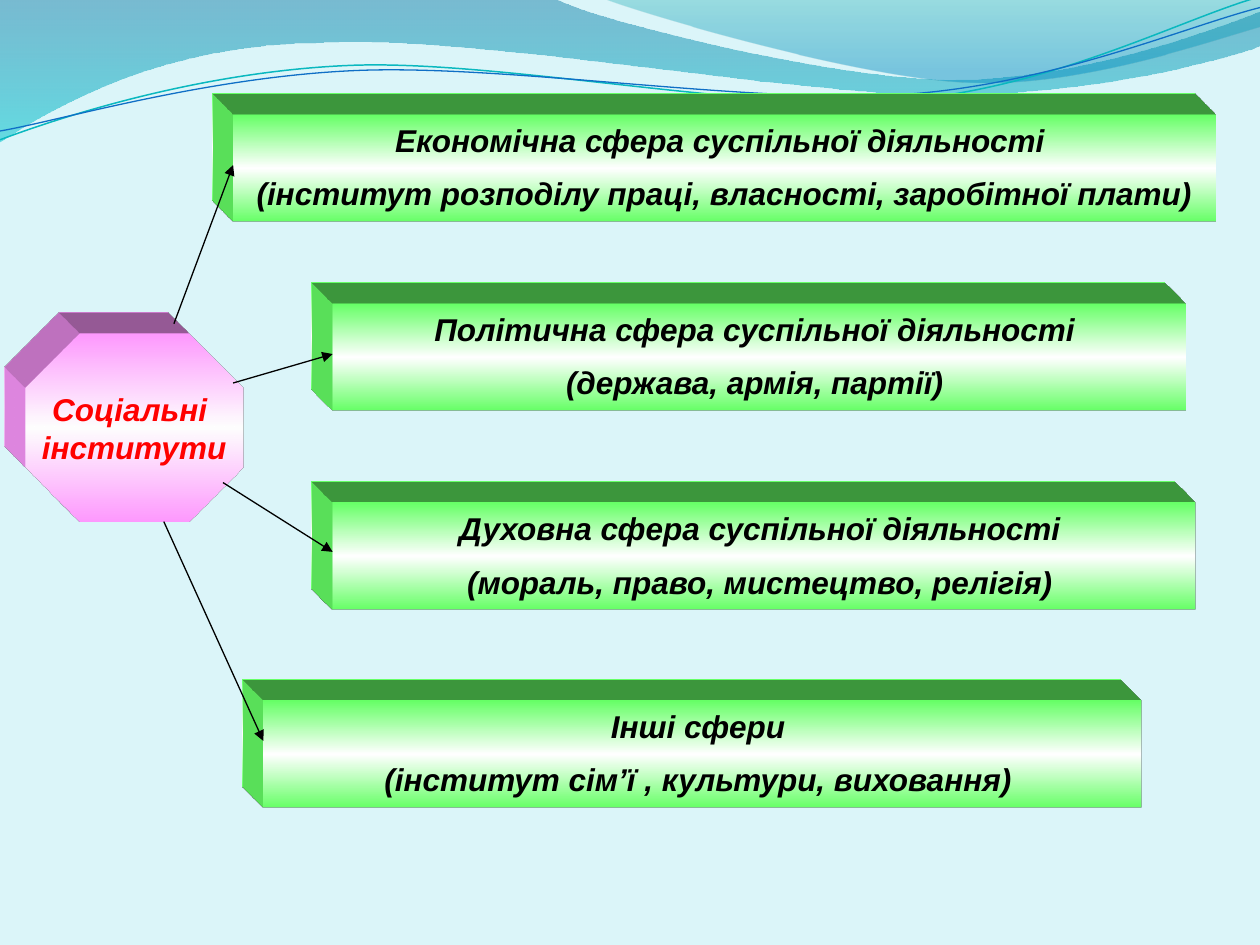
from lxml.etree import SubElement
from pptx import Presentation
from pptx.dml.color import RGBColor
from pptx.enum.shapes import MSO_CONNECTOR, MSO_SHAPE
from pptx.enum.text import MSO_ANCHOR, MSO_AUTO_SIZE, PP_ALIGN
from pptx.oxml import parse_xml
from pptx.oxml.ns import nsdecls, qn
from pptx.util import Inches, Pt

GREEN, PINK, WHITE = "66FF66", "FF99FF", "FFFFFF"
BARS = [
    ((1.85, 0.91, 7.8, 0.85), "Економічна сфера суспільної діяльності ",
     "(інститут розподілу праці, власності, заробітної плати)"),
    ((2.64, 2.41, 6.77, 0.85), "Політична сфера суспільної діяльності ",
     "(держава, армія, партії) "),
    ((2.64, 3.99, 6.85, 0.85), "Духовна сфера суспільної діяльності ",
     "(мораль, право, мистецтво, релігія) "),
    ((2.09, 5.56, 6.97, 0.85), "Інші сфери ",
     "(інститут сім’ї , культури, виховання) "),
]
ARROWS = [
    ((1.38, 2.57), (1.85, 1.31)),
    ((1.85, 3.04), (2.64, 2.81)),
    ((1.77, 3.83), (2.64, 4.38)),
    ((1.3, 4.14), (2.09, 5.88)),
]


def color(text):
    return RGBColor.from_string(text)


def shade(shape, stops):
    shape.shadow.inherit = False
    shape.line.fill.background()
    marks = "".join(
        f'<a:gs pos="{pos * 1000}"><a:srgbClr val="{tone}">'
        f'<a:alpha val="{solid * 1000}"/></a:srgbClr></a:gs>'
        for pos, tone, solid in stops)
    grad = parse_xml(
        f'<a:gradFill {nsdecls("a")} rotWithShape="1"><a:gsLst>{marks}</a:gsLst>'
        '<a:lin ang="5400000" scaled="1"/></a:gradFill>')
    shape.fill.solid()
    old = shape._element.spPr.find(qn("a:solidFill"))
    old.getparent().replace(old, grad)


def extrude(shape, tone):
    props = shape._element.spPr
    props.append(parse_xml(
        f'<a:scene3d {nsdecls("a")}><a:camera prst="legacyObliqueTopLeft"/>'
        '<a:lightRig rig="legacyFlat3" dir="b"/></a:scene3d>'))
    props.append(parse_xml(
        f'<a:sp3d {nsdecls("a")} extrusionH="430200" prstMaterial="legacyMatte">'
        '<a:bevelT w="13500" h="13500" prst="angle"/>'
        '<a:bevelB w="13500" h="13500" prst="angle"/>'
        f'<a:extrusionClr><a:srgbClr val="{tone}"/></a:extrusionClr></a:sp3d>'))


def trace(slide, start, parts, close):
    pen = slide.shapes.build_freeform(*map(Inches, start))
    pen.add_line_segments(
        [(Inches(x), Inches(y)) for part in parts for x, y in part], close)
    shape = pen.convert_to_shape()
    shape.shadow.inherit = False
    steps = iter(list(shape._element.iter(qn("a:lnTo"))))
    for part in parts:
        group = [next(steps) for _ in part]
        if len(group) == 3:
            bend = group[0]
            bend.tag = qn("a:cubicBezTo")
            for step in group[1:]:
                bend.append(step[0])
                step.getparent().remove(step)
    return shape


def waves(slide):
    low = trace(slide, (0, -0.01), [
        [(4.4, -0.01)],
        [(4.76, 0.17), (6.64, 0.63), (7.58, 0.63)],
        [(8.53, 0.63), (9.58, 0.26), (10, 0.09)],
        [(10.01, 0.36)],
        [(9.83, 0.44), (8.7, 0.76), (7.46, 0.75)],
        [(6.22, 0.75), (3.82, 0.28), (2.57, 0.34)],
        [(1.29, 0.35), (0.46, 0.83), (-0.01, 1.13)]], True)
    shade(low, [(0, "0074A1", 45), (100, "00C6CF", 55)])
    high = trace(slide, (4.79, -0.01), [
        [(5.09, 0.11), (6.82, 0.62), (7.69, 0.65)],
        [(8.56, 0.69), (9.61, 0.32), (10, 0.21)],
        [(10, 0)]], True)
    shade(high, [(0, "00A1A9", 30), (80, "008BBF", 45)])
    lines = [
        ("0AB8BF", 0.85, (0, 1.11), [
            [(0.48, 0.93), (1.58, 0.57), (2.77, 0.52)],
            [(3.95, 0.47), (5.93, 0.89), (7.13, 0.8)],
            [(8.33, 0.71), (9.38, 0.15), (9.98, -0.02)]]),
        ("0F6FC6", 0.75, (0, 1.04), [
            [(0.47, 0.96), (1.64, 0.61), (2.83, 0.56)],
            [(4.03, 0.51), (5.97, 0.83), (7.17, 0.75)],
            [(8.36, 0.67), (9.41, 0.21), (10, 0.06)]]),
    ]
    for tone, width, start, parts in lines:
        line = trace(slide, start, parts, False)
        line.fill.background()
        line.line.color.rgb = color(tone)
        line.line.width = Pt(width)


def block(slide, kind, box, tone, ink, texts, gap):
    shape = slide.shapes.add_shape(kind, *map(Inches, box))
    shade(shape, [(0, tone, 100), (50, WHITE, 100), (100, tone, 100)])
    extrude(shape, tone)
    frame = shape.text_frame
    for i, text in enumerate(texts):
        para = frame.paragraphs[0] if i == 0 else frame.add_paragraph()
        para.alignment = PP_ALIGN.CENTER
        para.space_before = Pt(gap)
        run = para.add_run()
        run.text = text
        font = run.font
        font.name, font.size = "Arial", Pt(18)
        font.bold = font.italic = True
        font.color.rgb = color(ink)
    return shape


def bar(slide, box, texts):
    shape = block(slide, MSO_SHAPE.RECTANGLE, box, GREEN, "000000", texts, 9)
    frame = shape.text_frame
    frame.word_wrap = True
    frame.vertical_anchor = MSO_ANCHOR.TOP
    frame.auto_size = MSO_AUTO_SIZE.SHAPE_TO_FIT_TEXT


def hub(slide, box):
    shape = block(slide, MSO_SHAPE.OCTAGON, box, PINK, "FF0000",
                  ["Соціальні ", "інститути"], 0)
    shape.adjustments[0] = 0.29
    shape.text_frame.word_wrap = False
    shape.text_frame.vertical_anchor = MSO_ANCHOR.MIDDLE


def arrow(slide, start, end):
    line = slide.shapes.add_connector(
        MSO_CONNECTOR.STRAIGHT, *map(Inches, start + end))
    line.line.color.rgb = color("000000")
    line.line.width = Pt(0.75)
    SubElement(line.line._get_or_add_ln(), qn("a:tailEnd"), type="triangle")
    SubElement(line._element.spPr, qn("a:effectLst"))


def main():
    deck = Presentation()
    deck.slide_width, deck.slide_height = Inches(10), Inches(7.5)
    slide = deck.slides.add_slide(deck.slide_layouts[6])
    slide.background.fill.solid()
    slide.background.fill.fore_color.rgb = color("DBF5F9")
    waves(slide)
    for box, *texts in BARS:
        bar(slide, box, texts)
    hub(slide, (0.2, 2.65, 1.73, 1.49))
    for start, end in ARROWS:
        arrow(slide, start, end)
    deck.save("out.pptx")


if __name__ == "__main__":
    main()
